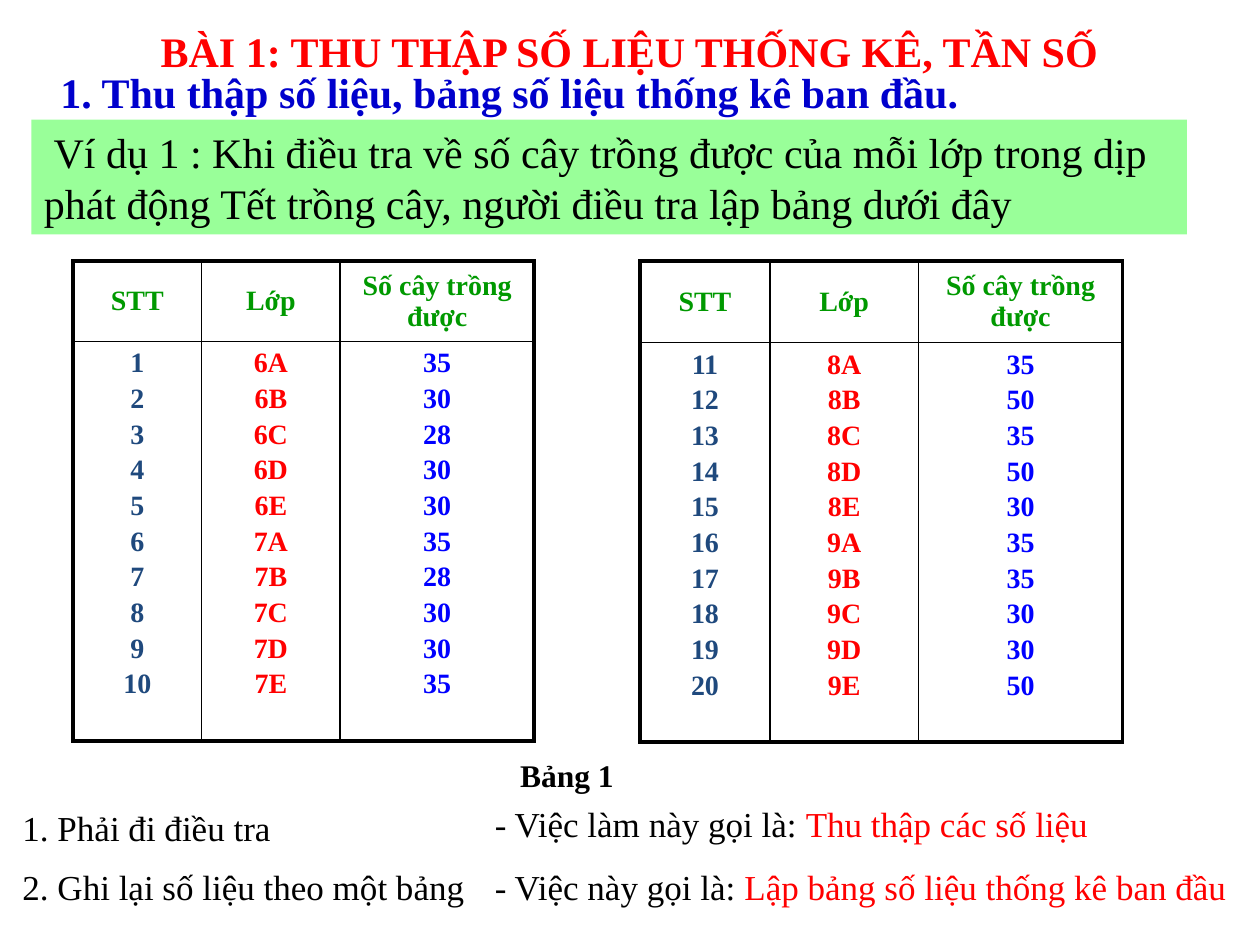
from dataclasses import dataclass

from lxml.etree import SubElement
from pptx import Presentation
from pptx.dml.color import RGBColor
from pptx.enum.shapes import MSO_SHAPE
from pptx.enum.text import MSO_ANCHOR, PP_ALIGN
from pptx.oxml.ns import qn
from pptx.util import Inches, Pt


@dataclass(frozen=True)
class Theme:
    font: str = "Times New Roman"
    black: str = "000000"
    white: str = "FFFFFF"
    red: str = "FF0000"
    navy: str = "0000CC"
    blue: str = "0000FF"
    slate: str = "1F497D"
    green: str = "009900"
    mint: str = "99FF99"
    heading: int = 24
    body: int = 20
    caption: int = 18
    cell: int = 16
    thick: float = 2.25
    thin: float = 1


THEME = Theme()
HEADERS = ["STT", "Lớp", "Số cây trồng được"]
COLUMN_COLORS = [THEME.slate, THEME.red, THEME.blue]
LEFT_CLASSES = ["6A", "6B", "6C", "6D", "6E", "7A", "7B", "7C", "7D", "7E"]
LEFT_TREES = [35, 30, 28, 30, 30, 35, 28, 30, 30, 35]
RIGHT_CLASSES = ["8A", "8B", "8C", "8D", "8E", "9A", "9B", "9C", "9D", "9E"]
RIGHT_TREES = [35, 50, 35, 50, 30, 35, 35, 30, 30, 50]


def format_run(r, size, color, bold=False):
    r.font.name = THEME.font
    r.font.size = Pt(size)
    r.font.bold = bold
    r.font.color.rgb = RGBColor.from_string(color)


def add_text(slide, box, parts, size, bold=False):
    sp = slide.shapes.add_textbox(*map(Inches, box))
    tf = sp.text_frame
    tf.word_wrap = True
    for text, color in parts:
        r = tf.paragraphs[0].add_run()
        r.text = text
        format_run(r, size, color, bold)
    return tf


def add_headings(slide, title_box, section_box):
    title = "BÀI 1: THU THẬP SỐ LIỆU THỐNG KÊ, TẦN SỐ"
    tf = add_text(slide, title_box, [(title, THEME.red)], THEME.heading, True)
    tf.vertical_anchor = MSO_ANCHOR.MIDDLE
    tf.paragraphs[0].alignment = PP_ALIGN.CENTER
    section = "1. Thu thập số liệu, bảng số liệu thống kê ban đầu."
    tf = add_text(slide, section_box, [(section, THEME.navy)], THEME.heading, True)
    tf.margin_left = Inches(0.2)
    tf.paragraphs[0].line_spacing = 0.9


def add_example(slide, box):
    sp = slide.shapes.add_shape(MSO_SHAPE.RECTANGLE, *map(Inches, box))
    sp.shadow.inherit = False
    sp.fill.solid()
    sp.fill.fore_color.rgb = RGBColor.from_string(THEME.mint)
    sp.line.fill.background()
    tf = sp.text_frame
    tf.word_wrap = True
    tf.vertical_anchor = MSO_ANCHOR.MIDDLE
    p = tf.paragraphs[0]
    p.text = (" Ví dụ 1 : Khi điều tra về số cây trồng được của mỗi lớp trong dịp "
              "phát động Tết trồng cây, người điều tra lập bảng dưới đây")
    p.alignment = PP_ALIGN.LEFT
    format_run(p.runs[0], THEME.heading, THEME.black)


def set_borders(cell, outer_sides):
    tc_pr = cell._tc.get_or_add_tcPr()
    for i, side in enumerate(["lnL", "lnR", "lnT", "lnB"]):
        width = THEME.thick if side in outer_sides else THEME.thin
        ln = tc_pr.makeelement(qn("a:" + side), {"w": str(Pt(width))})
        fill = SubElement(ln, qn("a:solidFill"))
        SubElement(fill, qn("a:srgbClr"), val=THEME.black)
        tc_pr.insert(i, ln)


def fill_cell(cell, lines, color):
    cell.fill.solid()
    cell.fill.fore_color.rgb = RGBColor.from_string(THEME.white)
    cell.text_frame.text = "\n".join(map(str, lines))
    for p in cell.text_frame.paragraphs:
        p.alignment = PP_ALIGN.CENTER
        p.space_before = Pt(2.6)
        format_run(p.runs[0], THEME.cell, color, True)


def add_tree_table(slide, left, top, widths, heights, columns):
    box = map(Inches, (left, top, sum(widths), sum(heights)))
    table = slide.shapes.add_table(2, len(widths), *box).table
    for row, height in zip(table.rows, heights):
        row.height = Inches(height)
    last = len(widths) - 1
    for i, (width, values) in enumerate(zip(widths, columns)):
        table.columns[i].width = Inches(width)
        head, body = table.cell(0, i), table.cell(1, i)
        head.vertical_anchor = MSO_ANCHOR.MIDDLE
        fill_cell(head, [HEADERS[i]], THEME.green)
        fill_cell(body, values, COLUMN_COLORS[i])
        sides = {0: ["lnL"], last: ["lnR"]}.get(i, [])
        set_borders(head, sides + ["lnT"])
        set_borders(body, sides + ["lnB"])


def add_conclusions(slide, left, answer_left):
    rows = [
        (6.35, 6.32, "1. Phải đi điều tra",
         "- Việc làm này gọi là: ", "Thu thập các số liệu"),
        (6.82, 6.82, "2. Ghi lại số liệu theo một bảng",
         "- Việc này gọi là: ", "Lập bảng số liệu thống kê ban đầu"),
    ]
    for step_top, answer_top, step, lead, answer in rows:
        add_text(slide, (left, step_top, 3.95, 0.44),
                 [(step, THEME.black)], THEME.body)
        add_text(slide, (answer_left, answer_top, 6.17, 0.44),
                 [(lead, THEME.black), (answer, THEME.red)], THEME.body)


def main():
    prs = Presentation()
    prs.slide_width, prs.slide_height = Inches(10), Inches(7.5)
    slide = prs.slides.add_slide(prs.slide_layouts[6])
    add_headings(slide, (0.27, 0.05, 9.45, 0.7), (0.28, 0.52, 9, 0.58))
    add_example(slide, (0.25, 0.95, 9.17, 0.91))
    add_tree_table(slide, 0.58, 2.07, [1.02, 1.1, 1.54], [0.64, 3.17],
                   [range(1, 11), LEFT_CLASSES, LEFT_TREES])
    add_tree_table(slide, 5.08, 2.07, [1.03, 1.18, 1.62], [0.65, 3.17],
                   [range(11, 21), RIGHT_CLASSES, RIGHT_TREES])
    add_conclusions(slide, 0.08, 3.83)
    add_text(slide, (4.03, 5.95, 1.1, 0.4), [("Bảng 1", THEME.black)],
             THEME.caption, True)
    prs.save("out.pptx")


if __name__ == "__main__":
    main()
